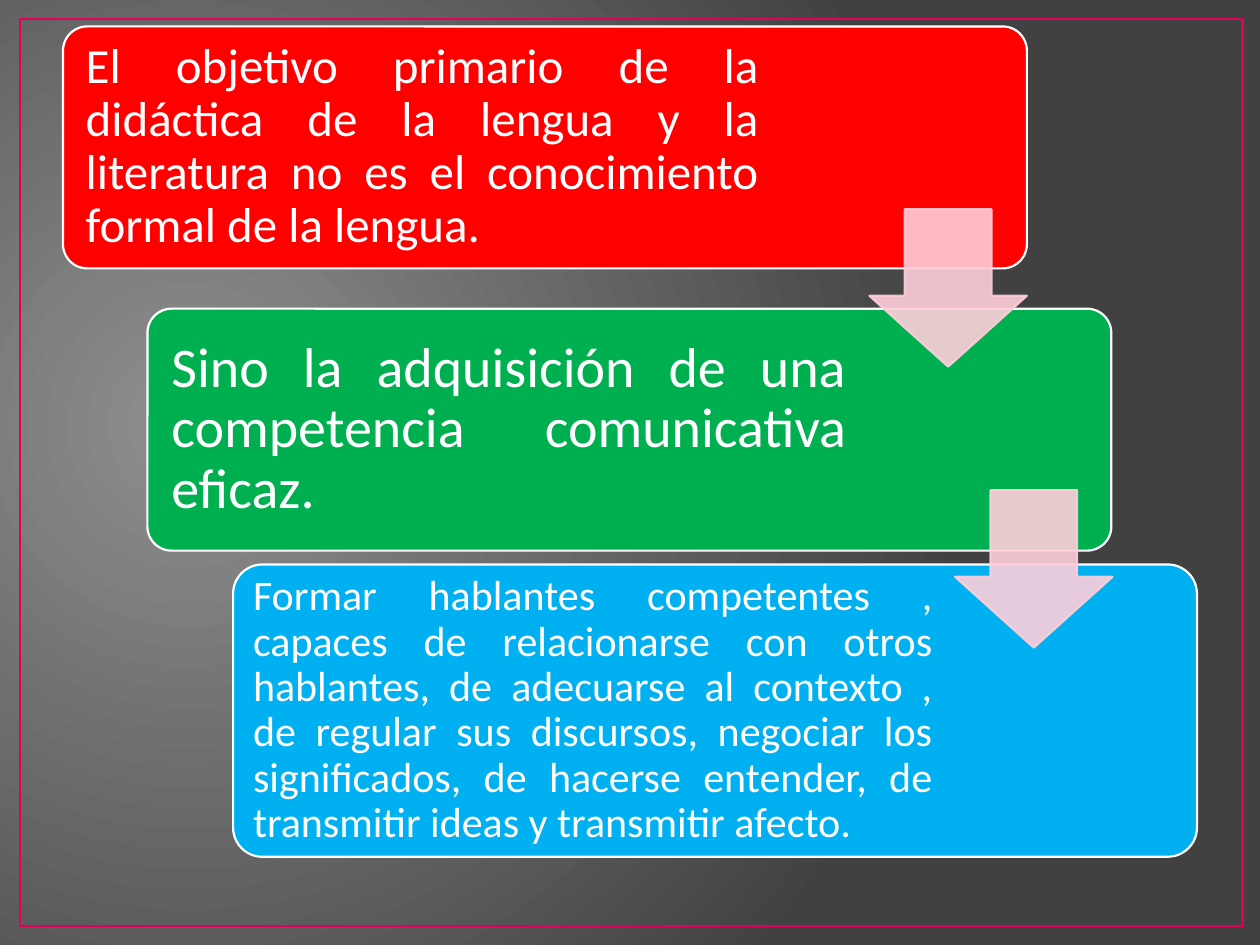
from dataclasses import dataclass

from lxml.etree import SubElement
from pptx import Presentation
from pptx.dml.color import RGBColor
from pptx.enum.shapes import MSO_SHAPE as Shape
from pptx.enum.text import MSO_ANCHOR as Anchor, PP_ALIGN as Align
from pptx.oxml import parse_xml
from pptx.oxml.ns import nsdecls, qn
from pptx.util import Inches, Pt


@dataclass(frozen=True)
class Theme:
    font: str = "Calibri"
    text: str = "FFFFFF"
    frame: str = "E40059"
    arrow: str = "FFCEDA"
    glow: str = "8F8F8F"
    dark: str = "414141"
    red: str = "FF0000"
    green: str = "00B050"
    blue: str = "00B0F0"
    large: int = 32
    medium: int = 28
    small: int = 24
    outline: float = 1.25


THEME = Theme()

# Each step: box, text width, text margin, fill, type size, wording
STEPS = [
    ((0.5, 0.21, 7.65, 1.92), 5.58, 0.12, THEME.red, THEME.medium,
     "El objetivo primario de la didáctica de la lengua y la literatura "
     "no es el conocimiento formal de la lengua."),
    ((1.17, 2.45, 7.65, 1.92), 5.62, 0.13, THEME.green, THEME.large,
     "Sino la adquisición de una competencia comunicativa eficaz."),
    ((1.85, 4.48, 7.65, 2.32), 5.59, 0.1, THEME.blue, THEME.small,
     "Formar hablantes competentes , capaces de relacionarse con otros "
     "hablantes, de adecuarse al contexto , de regular sus discursos, "
     "negociar los significados, de hacerse entender, de transmitir ideas "
     "y transmitir afecto."),
]
ARROWS = [(6.9, 1.66, 1.25, 1.25), (7.58, 3.89, 1.25, 1.25)]


def add_outline(page, kind, box, line, fill=None, width=THEME.outline, adjust=()):
    shape = page.shapes.add_shape(kind, *map(Inches, box))
    shape.shadow.inherit = False
    for index, value in enumerate(adjust):
        shape.adjustments[index] = value
    if fill:
        shape.fill.solid()
        shape.fill.fore_color.rgb = RGBColor.from_string(fill)
    else:
        shape.fill.background()
    shape.line.color.rgb = RGBColor.from_string(line)
    shape.line.width = Pt(width)
    return shape


def add_text(page, box, text, *, size, margin, color=THEME.text, align=Align.JUSTIFY):
    frame = page.shapes.add_textbox(*map(Inches, box)).text_frame
    frame.word_wrap = True
    frame.vertical_anchor = Anchor.MIDDLE
    frame.margin_left = frame.margin_right = Inches(margin)
    frame.margin_top = frame.margin_bottom = Inches(margin)
    para = frame.paragraphs[0]
    para.alignment = align
    para.line_spacing = 0.9
    span = para.add_run()
    span.text = text
    span.font.name = THEME.font
    span.font.size = Pt(size)
    span.font.color.rgb = RGBColor.from_string(color)


def add_background(page):
    fill = page.background.fill
    fill.gradient()
    for stop, color, position in zip(fill.gradient_stops, (THEME.glow, THEME.dark), (0, 1)):
        stop.color.rgb = RGBColor.from_string(color)
        stop.position = position
    # Radial glow centred near the left edge
    linear = page.element.find(".//" + qn("a:lin"))
    radial = parse_xml(
        f'<a:path {nsdecls("a")} path="circle">'
        '<a:fillToRect l="15000" t="50000" r="85000" b="60000"/></a:path>')
    linear.getparent().replace(linear, radial)


def add_step(page, box, text_width, margin, fill, size, text):
    add_outline(page, Shape.ROUNDED_RECTANGLE, box, THEME.text, fill, adjust=[0.1])
    left, top, _, height = box
    inset = 0.06
    text_box = (left + inset, top + inset, text_width, height - 2 * inset)
    add_text(page, text_box, text, size=size, margin=margin)


def add_arrow(page, box):
    arrow = add_outline(page, Shape.DOWN_ARROW, box, THEME.arrow, THEME.arrow,
                        adjust=[0.55, 0.45])
    # Slightly transparent fill and line
    for color in arrow.element.spPr.iter(qn("a:srgbClr")):
        SubElement(color, qn("a:alpha")).set("val", "90000")


def main():
    deck = Presentation()
    deck.slide_width, deck.slide_height = Inches(10), Inches(7.5)
    page = deck.slides.add_slide(deck.slide_layouts[6])
    add_background(page)
    add_outline(page, Shape.RECTANGLE, (0.16, 0.15, 9.7, 7.2), THEME.frame, width=1.5)
    for step in STEPS:
        add_step(page, *step)
    for box in ARROWS:
        add_arrow(page, box)
    deck.save("out.pptx")


if __name__ == "__main__":
    main()
